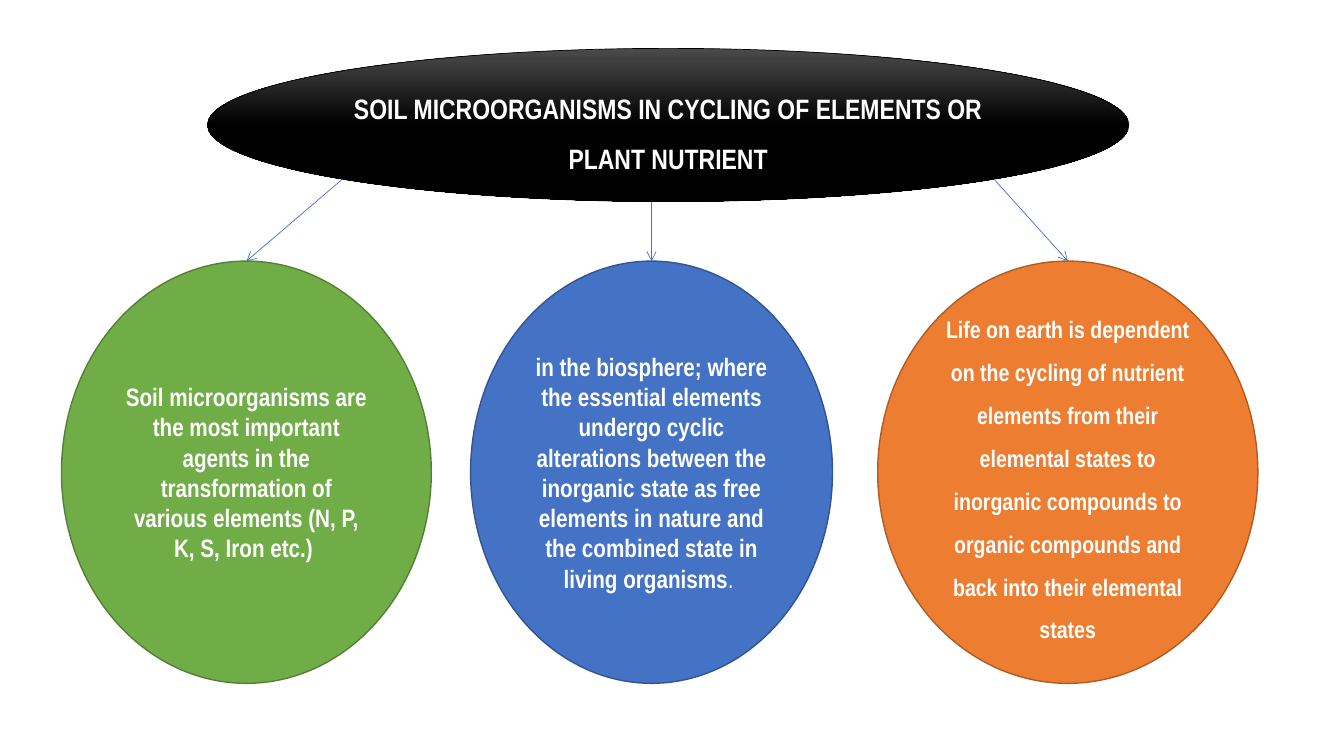
from dataclasses import dataclass
from math import cos, pi, sin

from lxml import etree
from pptx import Presentation
from pptx.dml.color import RGBColor
from pptx.enum import shapes, text
from pptx.oxml import ns
from pptx.util import Cm, Pt


@dataclass(frozen=True)
class Theme:
    font: str = "Arial Narrow"
    title_size: float = 20
    body_size: float = 18
    small_size: float = 17
    white: str = "FFFFFF"
    black: str = "000000"
    sheen: str = "4B4B4B"
    green: str = "70AD47"
    green_edge: str = "538035"
    blue: str = "4472C4"
    blue_edge: str = "325491"
    orange: str = "ED7D31"
    orange_edge: str = "AF5C24"
    thin: float = 0.5
    outline: float = 1


THEME = Theme()
CIRCLE_TOP, CIRCLE_HEIGHT = 6.58, 10.64


def rgb(color):
    return RGBColor.from_string(color)


def add_ellipse(slide, box, fill, edge, edge_width):
    shape = slide.shapes.add_shape(shapes.MSO_SHAPE.OVAL, *map(Cm, box))
    shape.shadow.inherit = False
    shape.fill.solid()
    shape.fill.fore_color.rgb = rgb(fill)
    shape.line.color.rgb = rgb(edge)
    shape.line.width = Pt(edge_width)
    return shape


def write_text(shape, words, size, spacing=1.0):
    """Centre bold white words in the shape and return their paragraph."""
    frame = shape.text_frame
    frame.word_wrap = True
    frame.vertical_anchor = text.MSO_ANCHOR.MIDDLE
    paragraph = frame.paragraphs[0]
    paragraph.alignment = text.PP_ALIGN.CENTER
    paragraph.line_spacing = spacing
    font = paragraph.font
    font.name, font.size, font.bold = THEME.font, Pt(size), True
    font.color.rgb = rgb(THEME.white)
    paragraph.add_run().text = words
    return paragraph


def shade_downwards(shape, top_color, bottom_color):
    """Fade from the top colour to the bottom colour by mid-height."""
    shape.fill.gradient()
    shape.fill.gradient_angle = 270
    stops = zip(shape.fill.gradient_stops, (0, 0.5), (top_color, bottom_color))
    for stop, position, color in stops:
        stop.position = position
        stop.color.rgb = rgb(color)


def add_arrow(slide, start, circle):
    """Draw an arrow from a point to the top of a circle."""
    arrow = slide.shapes.add_connector(
        shapes.MSO_CONNECTOR.STRAIGHT, *start, circle.left, circle.top)
    arrow.end_connect(circle, 0)
    arrow.line.color.rgb = rgb(THEME.blue)
    arrow.line.width = Pt(THEME.thin)
    etree.SubElement(arrow.line._get_or_add_ln(), ns.qn("a:tailEnd"), type="arrow")
    etree.SubElement(arrow._element.spPr, ns.qn("a:effectLst"))


def rim_point(shape, degrees):
    """Point on an ellipse's rim, with angles clockwise from the right."""
    angle = degrees * pi / 180
    x = shape.left + shape.width / 2 * (1 + cos(angle))
    y = shape.top + shape.height / 2 * (1 + sin(angle))
    return round(x), round(y)


def add_circle(slide, left, width, fill, edge):
    box = (left, CIRCLE_TOP, width, CIRCLE_HEIGHT)
    return add_ellipse(slide, box, fill, edge, THEME.outline)


def main():
    presentation = Presentation()
    presentation.slide_width, presentation.slide_height = Cm(33.87), Cm(19.05)
    slide = presentation.slides.add_slide(presentation.slide_layouts[6])

    title = add_ellipse(slide, (5.23, 1.22, 23.22, 3.86),
                        THEME.black, THEME.black, THEME.thin)
    shade_downwards(title, THEME.sheen, THEME.black)
    write_text(title, "SOIL MICROORGANISMS IN CYCLING OF ELEMENTS OR PLANT NUTRIENT",
               THEME.title_size, 1.5)

    agents = add_circle(slide, 1.55, 9.32, THEME.green, THEME.green_edge)
    write_text(agents, "Soil microorganisms are the most important agents in the "
               "transformation of various elements (N, P, K, S, Iron etc.) ",
               THEME.body_size)

    biosphere = add_circle(slide, 11.86, 9.12, THEME.blue, THEME.blue_edge)
    paragraph = write_text(
        biosphere, "in the biosphere; where the essential elements undergo cyclic "
        "alterations between the inorganic state as free elements in nature and "
        "the combined state in living organisms", THEME.body_size)
    full_stop = paragraph.add_run()
    full_stop.text = ". "
    full_stop.font.bold = False

    life = add_circle(slide, 22.12, 9.58, THEME.orange, THEME.orange_edge)
    write_text(life, "Life on earth is dependent on the cycling of nutrient elements "
               "from their elemental states to inorganic compounds to organic "
               "compounds and back into their elemental states",
               THEME.small_size, 1.5)

    add_arrow(slide, rim_point(title, 135), agents)
    below_title = (biosphere.left + biosphere.width // 2, title.top + title.height)
    add_arrow(slide, below_title, biosphere)
    add_arrow(slide, rim_point(title, 45), life)

    presentation.save("out.pptx")


if __name__ == "__main__":
    main()
